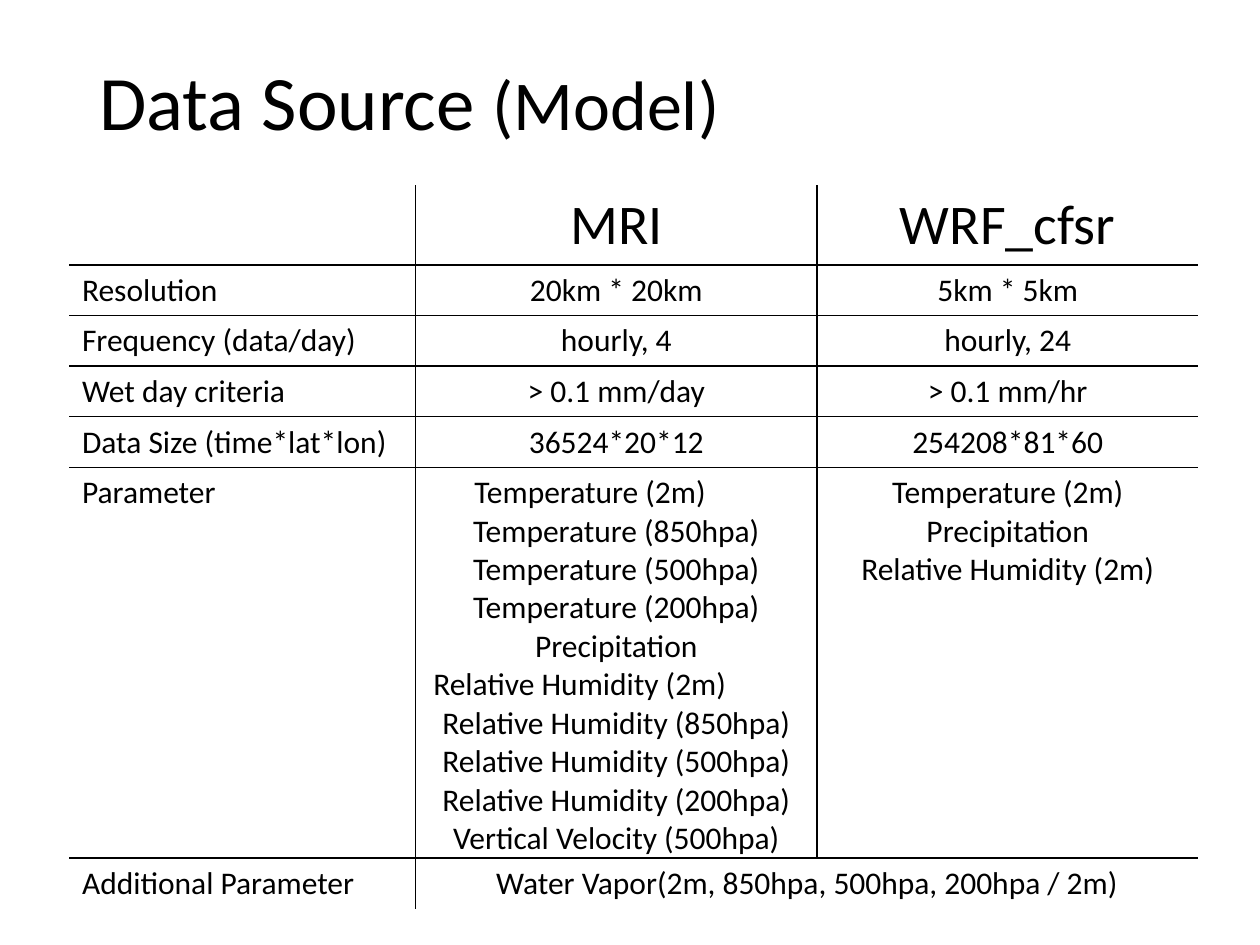
import pptx
import pptx.util
import pptx.dml.color
import pptx.enum.text
import lxml.etree

Cm = pptx.util.Cm
Pt = pptx.util.Pt
BLACK = pptx.dml.color.RGBColor(0, 0, 0)
ALIGN = pptx.enum.text.PP_ALIGN
NS = "http://schemas.openxmlformats.org/drawingml/2006/main"
PLAIN = "{2D5ABB26-0587-4C30-8999-92F81FD0307C}"


def add_run(para, text, size):
    run = para.add_run()
    run.text = text
    run.font.name = "Calibri"
    run.font.size = Pt(size)
    run.font.color.rgb = BLACK


def add_line(cell, side):
    props = cell._tc.get_or_add_tcPr()
    line = lxml.etree.SubElement(props, f"{{{NS}}}ln{side}", w=str(Pt(1)))
    fill = lxml.etree.SubElement(line, f"{{{NS}}}solidFill")
    lxml.etree.SubElement(fill, f"{{{NS}}}srgbClr", val=str(BLACK))


deck = pptx.Presentation()
deck.slide_width = Cm(25.4)
deck.slide_height = Cm(19.05)
slide = deck.slides.add_slide(deck.slide_layouts[6])

title = slide.shapes.add_textbox(Cm(1.75), Cm(1.02), Cm(20.32), Cm(2.2)).text_frame
title.word_wrap = True
title.vertical_anchor = pptx.enum.text.MSO_ANCHOR.MIDDLE
para = title.paragraphs[0]
para.line_spacing = 0.9
add_run(para, "Data Source ", 44)
add_run(para, "(Model)", 40)

levels = ["850hpa", "500hpa", "200hpa"]
params = (
    ["Temperature (2m)"]
    + [f"Temperature ({level})" for level in levels]
    + ["Precipitation", "Relative Humidity (2m)"]
    + [f"Relative Humidity ({level})" for level in levels]
    + ["Vertical Velocity (500hpa)"]
)
rows = [
    ([], ["MRI"], ["WRF_cfsr"]),
    (["Resolution"], ["20km * 20km"], ["5km * 5km"]),
    (["Frequency (data/day)"], ["hourly, 4"], ["hourly, 24"]),
    (["Wet day criteria"], ["> 0.1 mm/day"], ["> 0.1 mm/hr"]),
    (["Data Size (time*lat*lon)"], ["36524*20*12"], ["254208*81*60"]),
    (["Parameter"], params,
     ["Temperature (2m)", "Precipitation", "Relative Humidity (2m)"]),
    (["Additional Parameter"],
     ["Water Vapor(2m, 850hpa, 500hpa, 200hpa / 2m)"], []),
]
indents = {"Temperature (2m)": Cm(0.93), "Relative Humidity (2m)": Cm(0.1)}
widths = [6.98, 8.09, 7.69]
heights = [1.42, 1.02, 1.02, 1.02, 1.02, 7.85, 1.02]
last = len(rows) - 1

table = slide.shapes.add_table(
    len(rows), len(widths), Cm(1.4), Cm(3.73), Cm(sum(widths)), Cm(sum(heights))
).table
table.first_row = False
table.horz_banding = False
table._tbl.tblPr[0].text = PLAIN
for col, width in zip(table.columns, widths):
    col.width = Cm(width)
for row, height in zip(table.rows, heights):
    row.height = Cm(height)
table.cell(last, 1).merge(table.cell(last, 2))

for r, row in enumerate(rows):
    for c, lines in enumerate(row):
        cell = table.cell(r, c)
        frame = cell.text_frame
        for n, text in enumerate(lines):
            para = frame.add_paragraph() if n else frame.paragraphs[0]
            para.alignment = ALIGN.CENTER if c else ALIGN.LEFT
            if c == 1 and text in indents:
                para.alignment = ALIGN.LEFT
                para._p.get_or_add_pPr().set("marL", str(indents[text]))
            add_run(para, text, 18 if r else 32)
        sides = {
            "L": c == 1 or (c == 2 and r < last),
            "R": c == 0 or (c == 1 and r < last),
            "T": r > 0,
            "B": r < last,
        }
        for side, shown in sides.items():
            if shown:
                add_line(cell, side)
        cell.fill.background()

deck.save("out.pptx")
